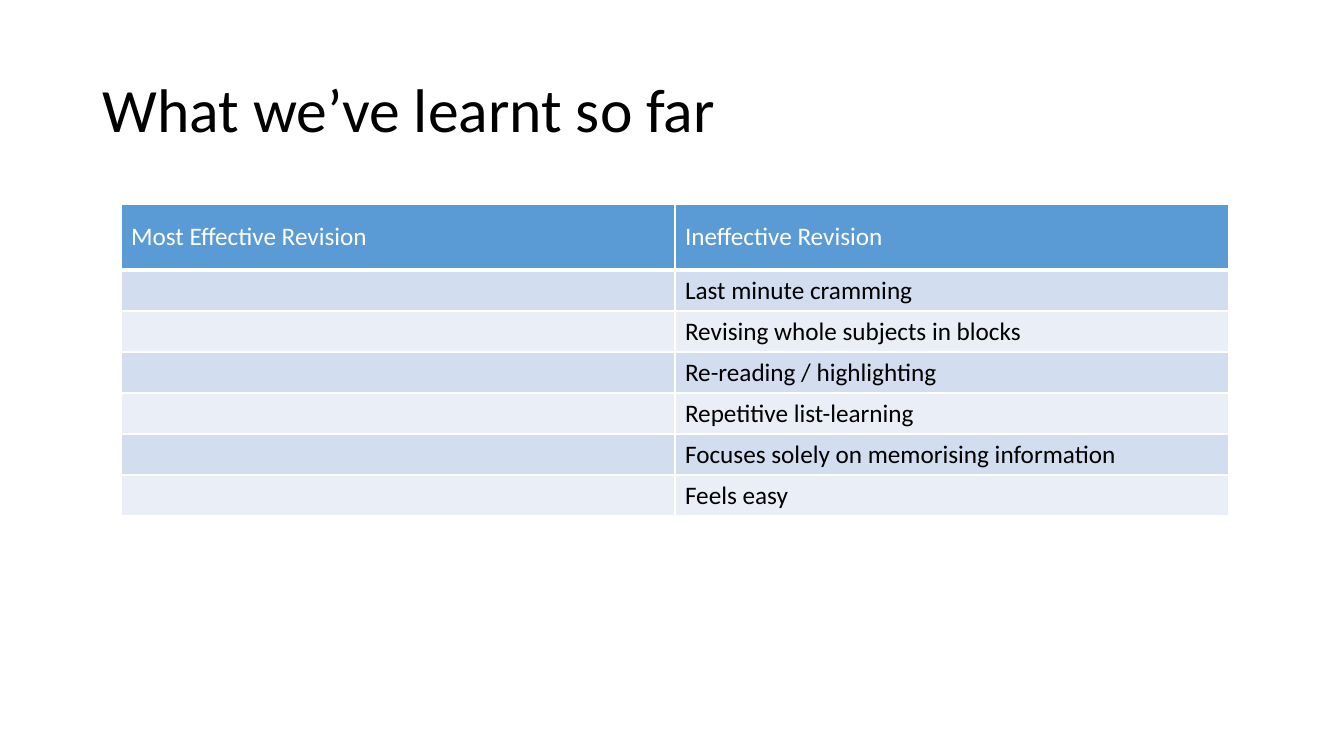
import dataclasses

import lxml.etree
import pptx
import pptx.dml.color
import pptx.enum.text
import pptx.oxml.ns
import pptx.util

EMU_PER_PX = 914400 / 100.8


@dataclasses.dataclass(frozen=True)
class Theme:
    font: str = "Calibri"
    title_size: int = 44
    table_size: int = 18
    text: str = "000000"
    white: str = "FFFFFF"
    header: str = "5B9BD5"
    bands: tuple = ("D2DEEF", "EAEFF7")


THEME = Theme()
ROWS = [
    ("Most Effective Revision", "Ineffective Revision"),
    ("", "Last minute cramming"),
    ("", "Revising whole subjects in blocks"),
    ("", "Re-reading / highlighting"),
    ("", "Repetitive list-learning"),
    ("", "Focuses solely on memorising information"),
    ("", "Feels easy"),
]


def px(n):
    return pptx.util.Emu(round(n * EMU_PER_PX))


def rgb(value):
    return pptx.dml.color.RGBColor.from_string(value)


def style_text(tf, size, color):
    for p in tf.paragraphs:
        p.font.size = pptx.util.Pt(size)
        for r in p.runs:
            r.font.name = THEME.font
            r.font.size = pptx.util.Pt(size)
            r.font.bold = False
            r.font.color.rgb = rgb(color)


def add_title(s, text, left, top, width, height):
    tf = s.shapes.add_textbox(px(left), px(top), px(width), px(height)).text_frame
    tf.word_wrap = True
    tf.vertical_anchor = pptx.enum.text.MSO_ANCHOR.MIDDLE
    tf.text = text
    tf.paragraphs[0].line_spacing = 0.9
    style_text(tf, THEME.title_size, THEME.text)


def set_borders(cell, bottom):
    """Draw white borders 1 pt wide, with the bottom one as wide as given."""
    tc_pr = cell._tc.get_or_add_tcPr()
    qn = pptx.oxml.ns.qn
    for side, width in (("L", 1), ("R", 1), ("T", 1), ("B", bottom)):
        ln = lxml.etree.SubElement(tc_pr, qn(f"a:ln{side}"), w=str(pptx.util.Pt(width)))
        fill = lxml.etree.SubElement(ln, qn("a:solidFill"))
        lxml.etree.SubElement(fill, qn("a:srgbClr"), val=THEME.white)


def style_cell(cell, fill, color, bottom=1):
    set_borders(cell, bottom)
    cell.fill.solid()
    cell.fill.fore_color.rgb = rgb(fill)
    style_text(cell.text_frame, THEME.table_size, color)


def add_revision_table(s, rows, left, top, col_width, header_height, row_height):
    columns = len(rows[0])
    height = header_height + row_height * (len(rows) - 1)
    table = s.shapes.add_table(
        len(rows), columns, px(left), px(top), px(col_width * columns), px(height)
    ).table
    for column in table.columns:
        column.width = px(col_width)
    for i, texts in enumerate(rows):
        table.rows[i].height = px(row_height if i else header_height)
        for cell, text in zip(table.rows[i].cells, texts):
            cell.text_frame.text = text
            if i:
                style_cell(cell, THEME.bands[(i - 1) % 2], THEME.text, 1)
            else:
                cell.vertical_anchor = pptx.enum.text.MSO_ANCHOR.MIDDLE
                style_cell(cell, THEME.header, THEME.white, 3)


def main():
    prs = pptx.Presentation()
    prs.slide_width, prs.slide_height = px(1344), px(756)
    s = prs.slides.add_slide(prs.slide_layouts[6])
    add_title(s, "What we’ve learnt so far", 93, 40, 1159, 146)
    add_revision_table(s, ROWS, 121, 204, 554, 66, 41)
    prs.save("out.pptx")


if __name__ == "__main__":
    main()
